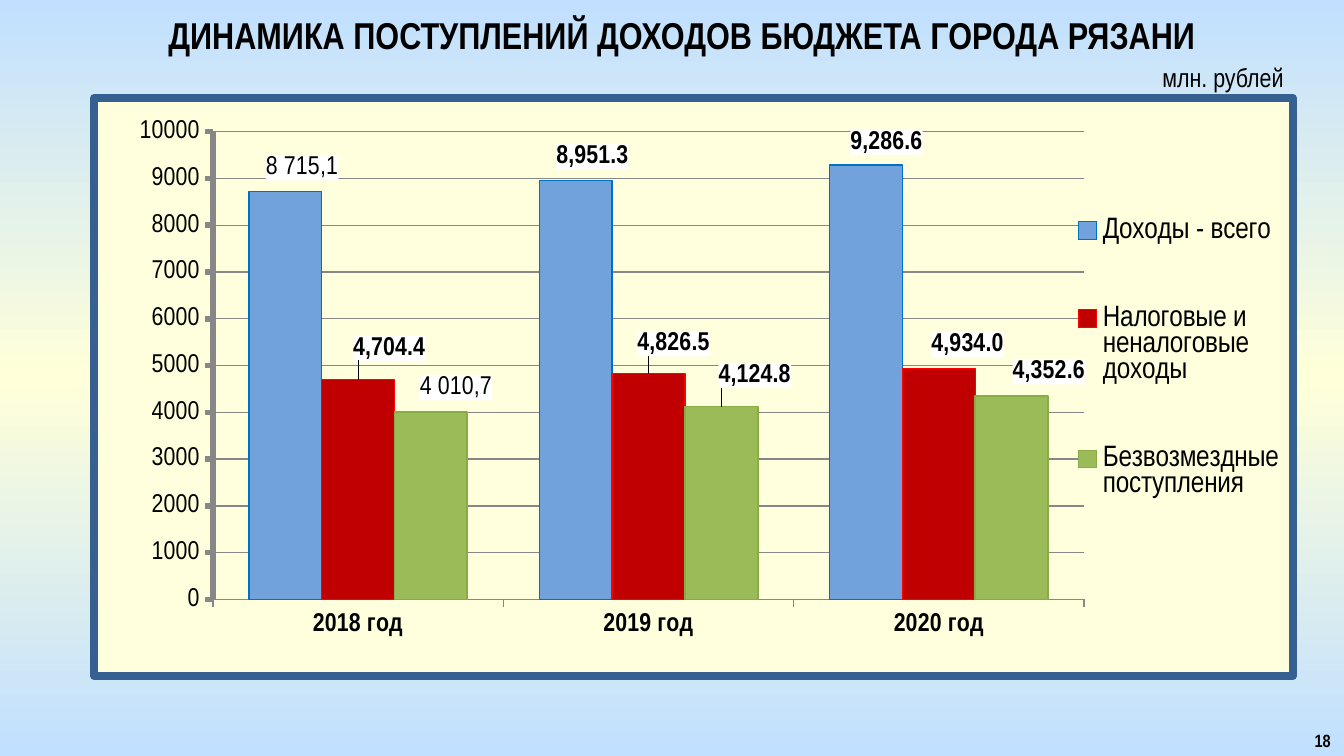
from copy import deepcopy

from lxml import etree
from pptx import Presentation
from pptx.chart.data import CategoryChartData
from pptx.dml.color import RGBColor
from pptx.enum.chart import XL_CHART_TYPE, XL_LABEL_POSITION, XL_LEGEND_POSITION, XL_TICK_MARK
from pptx.enum.text import MSO_ANCHOR, PP_ALIGN
from pptx.oxml import parse_xml
from pptx.oxml.ns import nsdecls, qn
from pptx.util import Inches, Pt

CLUSTERED = XL_CHART_TYPE.COLUMN_CLUSTERED
OUTSIDE_END = XL_LABEL_POSITION.OUTSIDE_END
LEGEND_RIGHT = XL_LEGEND_POSITION.RIGHT
TICK_OUT, TICK_NONE = XL_TICK_MARK.OUTSIDE, XL_TICK_MARK.NONE
MIDDLE, TOP = MSO_ANCHOR.MIDDLE, MSO_ANCHOR.TOP
CENTER, RIGHT = PP_ALIGN.CENTER, PP_ALIGN.RIGHT

FONT = "Arial Narrow"
NUMBER_FORMAT = "#,##0.0"
COLORS = {"sky": "C1E0FF", "cream": "FFFFD9", "panel": "FFFFDD", "frame": "376092",
          "text": "000000", "axis": "878787", "label": "FFFFFF"}
CHART_W, CHART_H = 8.98, 4.36


def set_font(font, size, bold=False):
    font.name, font.size, font.bold = FONT, Pt(size), bold
    font.color.rgb = RGBColor.from_string(COLORS["text"])


def manual_layout(x, y, w=None, h=None, inner=False):
    """Return a c:layout; without a size, x and y are offsets from the default place."""
    layout = etree.Element(qn("c:layout"))
    manual = etree.SubElement(layout, qn("c:manualLayout"))
    values = {"x": x, "y": y}
    if w:
        values = {"xMode": "edge", "yMode": "edge", "x": x, "y": y, "w": w, "h": h}
    if inner:
        values = {"layoutTarget": "inner", **values}
    for tag, value in values.items():
        etree.SubElement(manual, qn(f"c:{tag}")).set("val", str(value))
    return layout


prs = Presentation()
prs.slide_width = Inches(10)
prs.slide_height = Inches(10) * 9 // 16
s = prs.slides.add_slide(prs.slide_layouts[6])

# Background: sky, cream, sky from top to bottom
fill = s.background.fill
fill.gradient()
fill.gradient_angle = 90
first, last = fill.gradient_stops
for stop, color in ((first, "sky"), (last, "cream")):
    stop.color.rgb = RGBColor.from_string(COLORS[color])
stop_list = s.background._cSld.find(".//" + qn("a:gsLst"))
stop_list.append(deepcopy(stop_list[0]))
for stop, pos in zip(stop_list, (0, 50000, 100000)):
    stop.set("pos", str(pos))

# Texts
texts = [
    ("ДИНАМИКА ПОСТУПЛЕНИЙ ДОХОДОВ БЮДЖЕТА ГОРОДА РЯЗАНИ",
     (0.35, 0.06, 9.45, 0.4), 20, True, CENTER, MIDDLE),
    ("млн. рублей", (8.31, 0.45, 1.34, 0.24), 14, False, RIGHT, MIDDLE),
    ("18", (9.33, 5.35, 0.67, 0.26), 11.9, True, RIGHT, TOP),
]
for text, box, size, bold, align, anchor in texts:
    tf = s.shapes.add_textbox(*map(Inches, box)).text_frame
    tf.word_wrap = True
    tf.vertical_anchor = anchor
    p = tf.paragraphs[0]
    p.text, p.alignment = text, align
    set_font(p.font, size, bold)
p.runs[0].font._element.set("cap", "small")  # the slide number is in small caps

# Chart: label offsets are inches from the outside end of each column
series_specs = [
    ("Доходы - всего", (8715.1, 8951.3, 9286.6), "72A2DC", "0070C0", 0.75,
     ((0.13, -0.05), (0.13, -0.05), (0.15, -0.04))),
    ("Налоговые и неналоговые доходы", (4704.4, 4826.5, 4934.0), "C00000", "FF0000", 0.75,
     ((0.23, -0.1), (0.19, -0.09), (0.22, -0.05))),
    ("Безвозмездные поступления", (4010.7, 4124.8, 4352.6), "9BBB59", "8AAC46", 1,
     ((0.19, -0.05), (0.25, -0.1), (0.28, -0.05))),
]
typed_labels = {(0, 0): "8 715,1", (2, 0): "4 010,7"}

data = CategoryChartData(number_format=NUMBER_FORMAT)
data.categories = ["2018 год", "2019 год", "2020 год"]
for name, values, *_ in series_specs:
    data.add_series(name, values)
chart = s.shapes.add_chart(CLUSTERED, Inches(0.67), Inches(0.7),
                           Inches(CHART_W), Inches(CHART_H), data).chart
chart.has_title = False
set_font(chart.font, 18)
chart.font.name = "Calibri"
plot = chart.plots[0]
plot.gap_width, plot.overlap, plot.vary_by_categories = 99, 0, False

frame = parse_xml(
    f'<c:spPr {nsdecls("c", "a")}><a:solidFill><a:srgbClr val="{COLORS["panel"]}"/></a:solidFill>'
    f'<a:ln w="{Pt(4.5)}"><a:solidFill><a:srgbClr val="{COLORS["frame"]}"/></a:solidFill>'
    '<a:round/></a:ln></c:spPr>')
chart_space = chart._chartSpace
chart_space.find(qn("c:txPr")).addprevious(frame)
plot_area = chart_space.chart.plotArea
for old in plot_area.findall(qn("c:layout")):
    plot_area.remove(old)
plot_area.insert(0, manual_layout(0.099, 0.058, 0.727, 0.81, inner=True))

for axis, bold, width in ((chart.category_axis, True, 0.75), (chart.value_axis, False, 3)):
    set_font(axis.tick_labels.font, 14, bold)
    axis.major_tick_mark, axis.minor_tick_mark = TICK_OUT, TICK_NONE
    axis.format.line.width = Pt(width)
    axis.format.line.color.rgb = RGBColor.from_string(COLORS["axis"])
axis = chart.value_axis
axis.minimum_scale, axis.maximum_scale, axis.major_unit = 0, 10000, 1000
axis.tick_labels.number_format, axis.tick_labels.number_format_is_linked = "0", False
axis.has_major_gridlines = True
grid = axis.major_gridlines.format.line
grid.width = Pt(0.75)
grid.color.rgb = RGBColor.from_string(COLORS["axis"])

chart.has_legend = True
legend = chart.legend
legend.position, legend.include_in_layout = LEGEND_RIGHT, False
set_font(legend.font, 16)
legend_xml = chart_space.chart.find(qn("c:legend"))
for old in legend_xml.findall(qn("c:layout")):
    legend_xml.remove(old)
legend_xml.find(qn("c:legendPos")).addnext(manual_layout(0.815, 0.1, 0.18, 0.7))

label_fill = parse_xml(f'<c:spPr {nsdecls("c", "a")}><a:solidFill>'
                       f'<a:srgbClr val="{COLORS["label"]}"/></a:solidFill></c:spPr>')
no_leader_lines = parse_xml(
    f'<c:extLst {nsdecls("c")}><c:ext uri="{{CE6537A1-D6FC-4f65-9D91-7224C49458BB}}" '
    'xmlns:c15="http://schemas.microsoft.com/office/drawing/2012/chart">'
    '<c15:showLeaderLines val="0"/></c:ext></c:extLst>')
for i, (series, spec) in enumerate(zip(plot.series, series_specs)):
    _, values, color, line_color, line_width, offsets = spec
    series.format.fill.solid()
    series.format.fill.fore_color.rgb = RGBColor.from_string(color)
    series.format.line.color.rgb = RGBColor.from_string(line_color)
    series.format.line.width = Pt(line_width)
    labels = series.data_labels
    labels.show_value = True
    labels.number_format, labels.number_format_is_linked = NUMBER_FORMAT, False
    set_font(labels.font, 14, True)
    for j in range(len(values)):
        label = series.points[j].data_label
        if (i, j) in typed_labels:
            p = label.text_frame.paragraphs[0]
            r = p.add_run()
            r.text = typed_labels[i, j]
            set_font(r.font, 14)
        else:
            set_font(label.font, 14, True)
        label.position = OUTSIDE_END
    for label_xml, (dx, dy) in zip(series._element.iter(qn("c:dLbl")), offsets):
        layout = manual_layout(round(dx / CHART_W, 3), round(dy / CHART_H, 3))
        label_xml.find(qn("c:idx")).addnext(layout)
        following = label_xml.find(qn("c:txPr"))
        if following is None:
            following = label_xml.find(qn("c:dLblPos"))
        following.addprevious(deepcopy(label_fill))
    series._element.find(qn("c:dLbls")).append(deepcopy(no_leader_lines))

prs.save("out.pptx")
